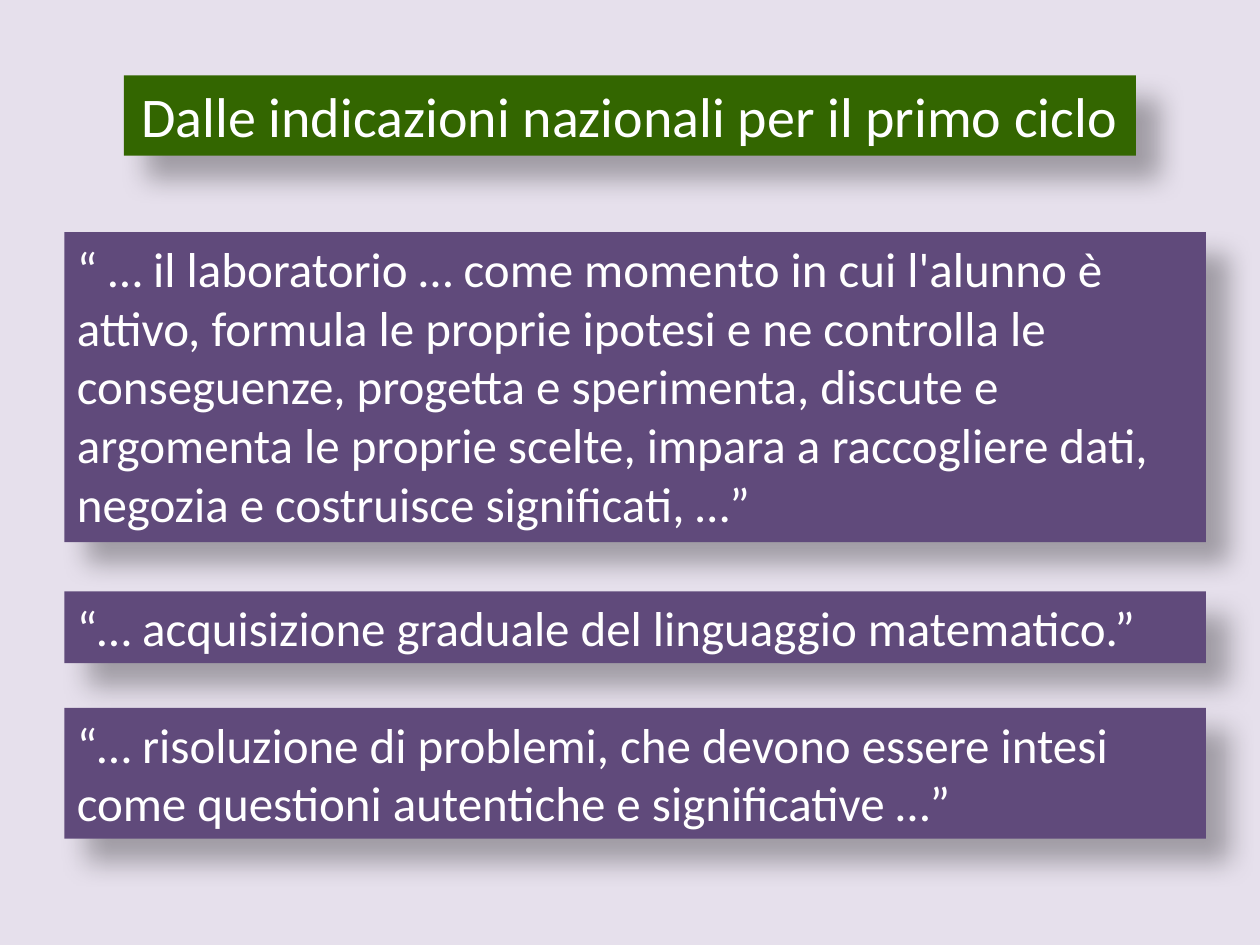
from lxml import etree
from pptx import Presentation
from pptx.dml.color import RGBColor
from pptx.enum.shapes import MSO_SHAPE as Shape
from pptx.enum.text import MSO_ANCHOR as Anchor, MSO_AUTO_SIZE as AutoSize, PP_ALIGN as Align
from pptx.oxml.ns import qn
from pptx.util import Cm, Pt

LAVENDER = RGBColor(0xE6, 0xE0, 0xEC)
PURPLE = RGBColor(0x60, 0x4A, 0x7B)
GREEN = RGBColor(0x33, 0x66, 0x00)
WHITE = RGBColor(0xFF, 0xFF, 0xFF)
BLACK = RGBColor(0x00, 0x00, 0x00)

QUOTE_LEFT, QUOTE_WIDTH = 1.3, 23.01

# Top and height in cm, then the wording
QUOTES = [
    (4.68, 6.25, "“ … il laboratorio … come momento in cui l'alunno è attivo, formula le "
                 "proprie ipotesi e ne controlla le conseguenze, progetta e sperimenta, "
                 "discute e argomenta le proprie scelte, impara a raccogliere dati, "
                 "negozia e costruisce significati, …”"),
    (11.92, 1.45, "“… acquisizione graduale del linguaggio matematico.”"),
    (14.27, 2.64, "“… risoluzione di problemi, che devono essere intesi come questioni "
                  "autentiche e significative …”"),
]


def add_shadow(box):
    """Soft shadow falling to the lower right."""
    box.shadow.inherit = False
    effects = box._element.spPr.find(qn("a:effectLst"))
    shadow = etree.SubElement(effects, qn("a:outerShdw"), blurRad=str(Pt(15)),
                              dist=str(Pt(18)), dir=str(45 * 60000),
                              algn="tl", rotWithShape="0")
    color = etree.SubElement(shadow, qn("a:srgbClr"), val=str(BLACK))
    etree.SubElement(color, qn("a:alpha"), val="30000")


def write_text(box, text, size=28, align=Align.LEFT, color=WHITE, font="Calibri"):
    frame = box.text_frame
    frame.word_wrap = True
    frame.auto_size = AutoSize.SHAPE_TO_FIT_TEXT
    frame.vertical_anchor = Anchor.TOP
    para = frame.paragraphs[0]
    para.alignment = align
    span = para.add_run()
    span.text = text
    span.font.name = font
    span.font.size = Pt(size)
    span.font.color.rgb = color


def add_panel(page, left, top, width, height, fill, text, **text_format):
    box = page.shapes.add_shape(Shape.RECTANGLE, Cm(left), Cm(top), Cm(width), Cm(height))
    box.fill.solid()
    box.fill.fore_color.rgb = fill
    box.line.fill.background()
    add_shadow(box)
    write_text(box, text, **text_format)


def main():
    deck = Presentation()
    deck.slide_width, deck.slide_height = Cm(25.4), Cm(19.05)
    page = deck.slides.add_slide(deck.slide_layouts[6])
    page.background.fill.solid()
    page.background.fill.fore_color.rgb = LAVENDER

    # Title
    add_panel(page, 2.5, 1.52, 20.4, 1.62, GREEN,
              "Dalle indicazioni nazionali per il primo ciclo", size=32, align=Align.CENTER)

    # Quotations
    for top, height, text in QUOTES:
        add_panel(page, QUOTE_LEFT, top, QUOTE_WIDTH, height, PURPLE, text)

    deck.save("out.pptx")


if __name__ == "__main__":
    main()
